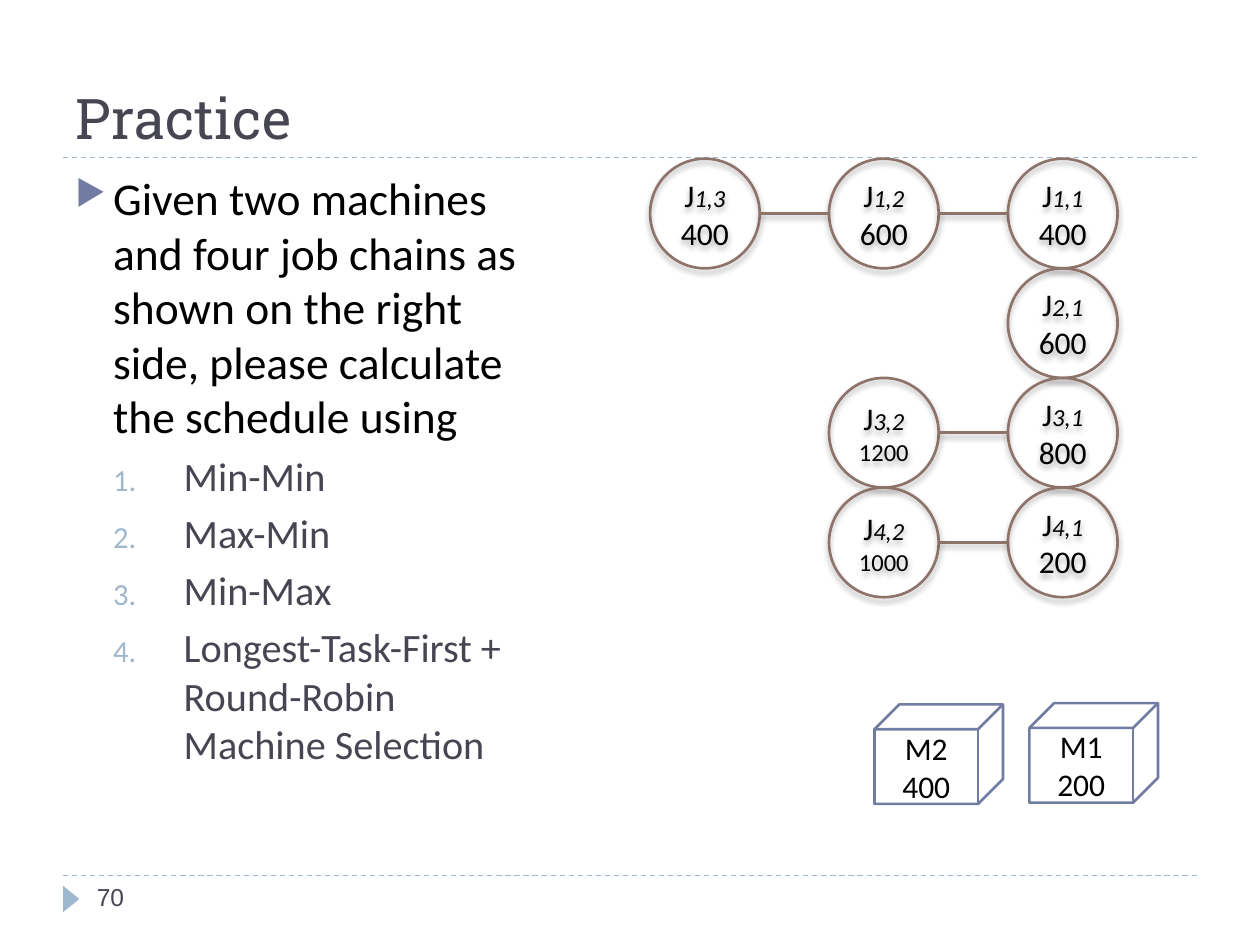
"""Build the practice slide on scheduling job chains."""
import pptx
import pptx.util
import pptx.dml.color
import pptx.enum.dml
import pptx.enum.shapes
import pptx.enum.text
import pptx.oxml
import pptx.oxml.ns

Inches, Pt = pptx.util.Inches, pptx.util.Pt
Kind = pptx.enum.shapes.MSO_SHAPE
Align = pptx.enum.text.PP_ALIGN
Anchor = pptx.enum.text.MSO_ANCHOR
NS = pptx.oxml.ns.nsdecls("a")
INK, BLUE, PALE, BROWN = "464653", "727CA3", "9FB8CD", "8E736A"
DIAM = 0.87


def color(code):
    return pptx.dml.color.RGBColor.from_string(code)


class Deck:
    def __init__(self):
        self.file = pptx.Presentation()
        self.file.slide_width, self.file.slide_height = Inches(10), Inches(7.5)
        self.slide = self.file.slides.add_slide(self.file.slide_layouts[5])
        self.shapes = self.slide.shapes
        self.font = "Calibri"

    def run(self, para, text, size, tone="000000", font=None, slant=False):
        run = para.add_run()
        run.text = text
        run.font.size, run.font.name = Pt(size), font or self.font
        run.font.italic = slant
        run.font.color.rgb = color(tone)

    def title(self, text, *box):
        head = self.shapes.title
        head.left, head.top, head.width, head.height = map(Inches, box)
        head.text_frame.vertical_anchor = Anchor.BOTTOM
        para = head.text_frame.paragraphs[0]
        para.alignment = Align.LEFT
        self.run(para, text, 32, INK, "Roboto Slab")

    def text(self, *box):
        frame = self.shapes.add_textbox(*map(Inches, box)).text_frame
        frame.word_wrap = True
        return frame

    def bullet(self, para, mark, tone, left, hang, gap):
        para.space_before = Pt(gap)
        props = para._p.get_or_add_pPr()
        props.set("marL", str(Inches(left)))
        props.set("indent", str(-Inches(hang)))
        for xml in (f'<a:buClr {NS}><a:srgbClr val="{tone}"/></a:buClr>',
                    f'<a:buSzPct {NS} val="76000"/>', mark):
            props.append(pptx.oxml.parse_xml(xml))

    def effect(self, shape, shade):
        drop = ('<a:outerShdw blurRad="44450" dist="27940" dir="5400000">'
                '<a:srgbClr val="000000"><a:alpha val="32000"/></a:srgbClr>'
                '</a:outerShdw>') if shade else ""
        shape._element.spPr.append(pptx.oxml.parse_xml(
            f"<a:effectLst {NS}>{drop}</a:effectLst>"))

    def line(self, x, y, end, tone, width, dash=False):
        line = self.shapes.add_connector(
            pptx.enum.shapes.MSO_CONNECTOR.STRAIGHT,
            Inches(x), Inches(y), Inches(end), Inches(y))
        line.line.color.rgb, line.line.width = color(tone), Pt(width)
        if dash:
            line.line.dash_style = pptx.enum.dml.MSO_LINE.DASH
        self.effect(line, not dash)

    def shape(self, kind, box, edge=None, fill=None, shade=False):
        shape = self.shapes.add_shape(kind, *map(Inches, box))
        if fill:
            shape.fill.solid()
            shape.fill.fore_color.rgb = color(fill)
        else:
            shape.fill.background()
        if edge:
            shape.line.color.rgb, shape.line.width = color(edge), Pt(1.5)
        else:
            shape.line.fill.background()
        self.effect(shape, shade)
        return shape

    def label(self, shape, *rows):
        frame = shape.text_frame
        frame.word_wrap = False
        frame.vertical_anchor = Anchor.MIDDLE
        for i, row in enumerate(rows):
            para = frame.add_paragraph() if i else frame.paragraphs[0]
            para.alignment = Align.CENTER
            for text, size, slant in row:
                self.run(para, text, size, slant=slant)

    def job(self, x, y, name, load):
        ring = self.shape(Kind.OVAL, (x, y, DIAM, DIAM), BROWN, shade=True)
        size = 14 if len(load) > 3 else 18
        self.label(ring, [("J", 18, False), (name, 14, True)],
                   [(load, size, False)])

    def cube(self, x, y, name, speed):
        cube = self.shape(Kind.CUBE, (x, y, 1.02, 0.79), BLUE)
        self.label(cube, [(name, 18, False)], [(speed, 18, False)])


def main():
    deck = Deck()
    for y in (6.95, 1.25):
        deck.line(0.5, y, 9.5, PALE, 0.75, True)
    mark = deck.shape(Kind.ISOSCELES_TRIANGLE, (0.46, 7.07, 0.21, 0.13), fill=PALE)
    mark.rotation = 90
    deck.title("Practice", 0.5, 0.17, 9, 1.08)

    body = deck.text(0.5, 1.3, 3.83, 5.4)
    para = body.paragraphs[0]
    deck.bullet(para, f'<a:buChar {NS} char="▶"/>', BLUE, 0.3, 0.3, 6)
    deck.run(para, "Given two machines and four job chains as shown on the "
             "right side, please calculate the schedule using", 26)
    for rule in ("Min-Min", "Max-Min", "Min-Max",
                 "Longest-Task-First + Round-Robin Machine Selection"):
        para = body.add_paragraph()
        para.level = 1
        deck.bullet(para, f'<a:buAutoNum {NS} type="arabicPeriod"/>',
                    PALE, 0.86, 0.56, 5)
        deck.run(para, rule, 23, INK)
    page = deck.text(0.67, 6.95, 2.17, 0.4)
    deck.run(page.paragraphs[0], "70", 14, INK, "Arial")

    chains = (("400", "600", "400"), ("600",), ("800", "1200"), ("200", "1000"))
    step = 1.42
    for i, chain in enumerate(chains):
        y = 1.26 + i * DIAM
        for j, load in enumerate(chain):
            x = 8 - j * step
            deck.job(x, y, f"{i + 1},{j + 1}", load)
            if j:
                deck.line(x + DIAM, y + DIAM / 2, x + step, BROWN, 1.5)

    deck.cube(8.17, 5.58, "M1", "200")
    deck.cube(6.94, 5.59, "M2", "400")
    deck.file.save("out.pptx")


if __name__ == "__main__":
    main()
